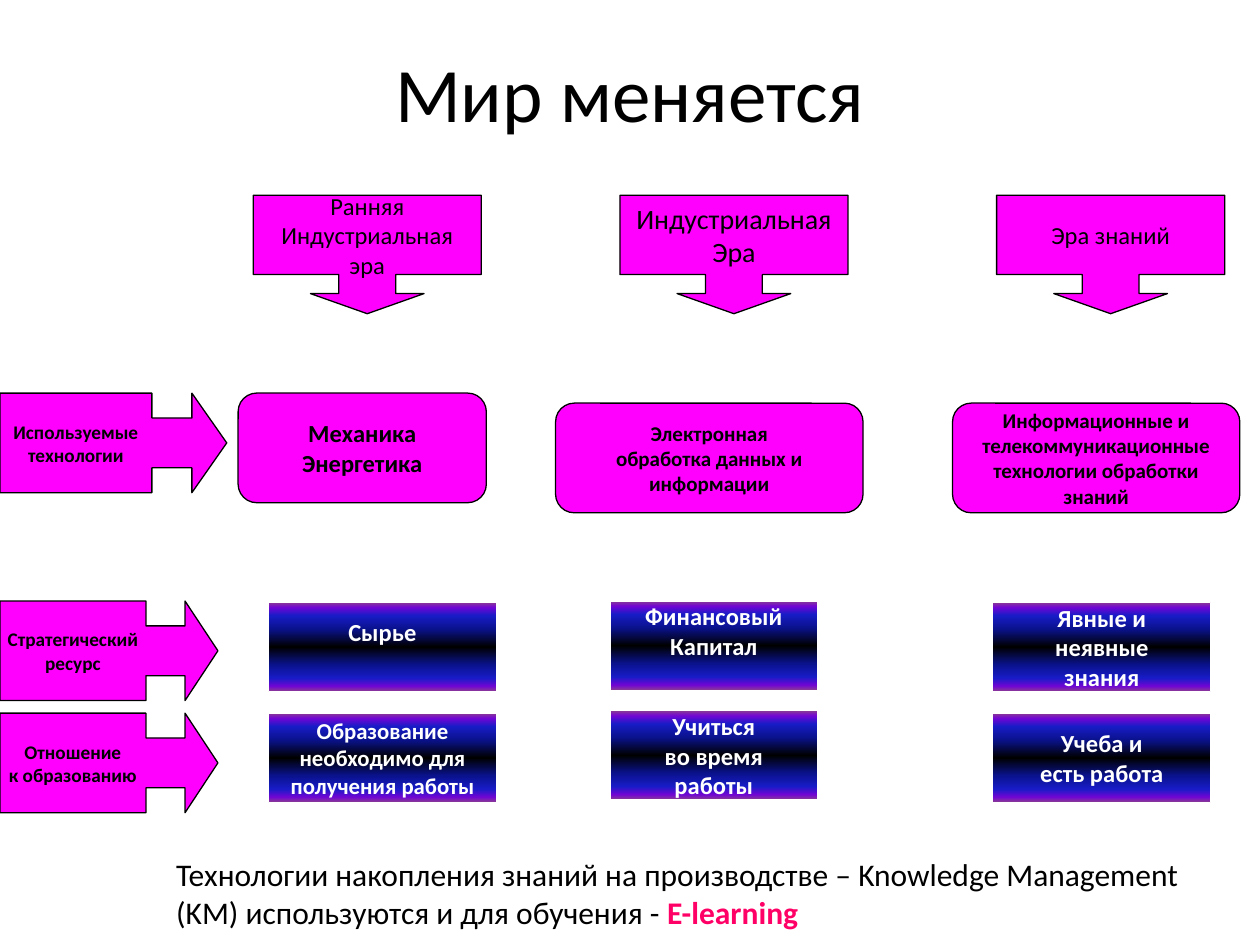
from lxml.etree import SubElement
from pptx import Presentation
from pptx.dml.color import RGBColor
from pptx.enum.shapes import MSO_SHAPE as Shape
from pptx.enum.text import MSO_ANCHOR as Anchor, PP_ALIGN as Align
from pptx.oxml.ns import qn
from pptx.util import Inches, Pt

MAGENTA = RGBColor(0xFF, 0x00, 0xFF)
BLACK = RGBColor(0x00, 0x00, 0x00)
WHITE = RGBColor(0xFF, 0xFF, 0xFF)
PINK = RGBColor(0xFF, 0x00, 0x66)
PURPLE = RGBColor(0x8C, 0x3D, 0x91)
VIOLET = RGBColor(0x70, 0x05, 0xD4)
BLUE = RGBColor(0x18, 0x1C, 0xC7)
NAVY = RGBColor(0x0A, 0x12, 0x8C)
FONT = "Calibri"

HALF_GLOW = [(0, PURPLE), (6, VIOLET), (15, BLUE), (30, NAVY)]
GLOW = HALF_GLOW + [(50, BLACK)] + [(100 - at, color) for at, color in reversed(HALF_GLOW)]

TITLE = "Мир меняется"
ERAS = [
    (2.01, 14, ["Ранняя", "Индустриальная", "эра"]),
    (4.92, 16, ["Индустриальная", "Эра"]),
    (7.91, 14, ["Эра знаний"]),
]
ASPECTS = [
    (3.12, 1.8, 0.35, ["Используемые", "технологии"]),
    (4.77, 1.73, 0.33, ["Стратегический", "ресурс"]),
    (5.66, 1.73, 0.33, ["Отношение", "к образованию"]),
]
TECHNOLOGIES = [
    (1.89, 3.12, 1.97, 14, ["Механика", "Энергетика"]),
    (4.41, 3.2, 2.44, 12, ["Электронная", "обработка данных и", "информации"]),
    (7.56, 3.2, 2.28, 12,
     ["Информационные и", "телекоммуникационные", "технологии обработки", "знаний"]),
]
CARD_COLUMNS = [(2.13, 1.81), (4.84, 1.65), (7.88, 1.73)]
CARD_ROWS = [
    [(4.78, 14, 0.29, ["Сырье"]),
     (4.77, 14, 0.29, ["Финансовый", "Капитал"]),
     (4.78, 14, 0.05, ["Явные и", "неявные", "знания"])],
    [(5.66, 13, 0.05, ["Образование", "необходимо для", "получения работы"]),
     (5.64, 14, 0.05, ["Учиться", "во время", "работы"]),
     (5.66, 14, 0.05, ["Учеба и", "есть работа"])],
]
SUMMARY = ("Технологии накопления знаний на производстве – Knowledge Management (KM) "
           "используются и для обучения - ")
HIGHLIGHT = "E-learning"


def style(font, size, color, bold=False):
    font.name, font.size, font.bold = FONT, Pt(size), bold
    font.color.rgb = color


def add_block(slide, kind, box, lines, size, bold=True, adjust=(), ink=BLACK, edge=BLACK):
    block = slide.shapes.add_shape(kind, *map(Inches, box))
    for index, value in enumerate(adjust):
        block.adjustments[index] = value
    block.shadow.inherit = False
    block.fill.solid()
    block.fill.fore_color.rgb = MAGENTA
    block.line.color.rgb = edge
    block.line.width = Pt(0.75)
    frame = block.text_frame
    frame.word_wrap = False
    frame.vertical_anchor = Anchor.MIDDLE
    for index, line in enumerate(lines):
        paragraph = frame.add_paragraph() if index else frame.paragraphs[0]
        paragraph.text = line
        paragraph.alignment = Align.CENTER
        style(paragraph.font, size, ink, bold)
    return block


def fill_glow(card):
    card.fill.gradient()
    card.fill.gradient_angle = 270
    stops = card.element.spPr.find(qn("a:gradFill")).find(qn("a:gsLst"))
    for stop in list(stops):
        stops.remove(stop)
    for at, color in GLOW:
        stop = SubElement(stops, qn("a:gs"), pos=str(at * 1000))
        SubElement(stop, qn("a:srgbClr"), val=str(color))


def main():
    deck = Presentation()
    deck.slide_width, deck.slide_height = Inches(10), Inches(7.5)
    slide = deck.slides.add_slide(deck.slide_layouts[5])

    title = slide.shapes.title
    title.left, title.top, title.width, title.height = map(Inches, (0.5, 0.3, 9, 0.85))
    title.text_frame.text = TITLE
    title.text_frame.vertical_anchor = Anchor.MIDDLE
    heading = title.text_frame.paragraphs[0]
    heading.alignment = Align.CENTER
    style(heading.font, 44, BLACK)

    for left, size, lines in ERAS:
        add_block(slide, Shape.DOWN_ARROW_CALLOUT, (left, 1.55, 1.81, 0.94), lines, size,
                  bold=False, adjust=(0.48, 0.48, 0.17, 0.67))
    for top, width, head, lines in ASPECTS:
        add_block(slide, Shape.RIGHT_ARROW_CALLOUT, (0, top, width, 0.79), lines, 11,
                  adjust=(0.5, 0.5, head, 0.67))
    for left, top, width, size, lines in TECHNOLOGIES:
        add_block(slide, Shape.ROUNDED_RECTANGLE, (left, top, width, 0.87), lines, size,
                  adjust=(0.17,))
    for row in CARD_ROWS:
        for (left, width), (top, size, bottom, lines) in zip(CARD_COLUMNS, row):
            card = add_block(slide, Shape.RECTANGLE, (left, top, width, 0.71), lines, size,
                             ink=WHITE, edge=WHITE)
            card.text_frame.margin_bottom = Inches(bottom)
            fill_glow(card)

    summary = slide.shapes.add_textbox(*map(Inches, (1.3, 6.74, 8.35, 0.7))).text_frame
    summary.word_wrap = True
    conclusion = summary.paragraphs[0]
    style(conclusion.font, 18, BLACK)
    conclusion.add_run().text = SUMMARY
    highlight = conclusion.add_run()
    highlight.text = HIGHLIGHT
    highlight.font.bold = True
    highlight.font.color.rgb = PINK

    deck.save("out.pptx")


if __name__ == "__main__":
    main()
